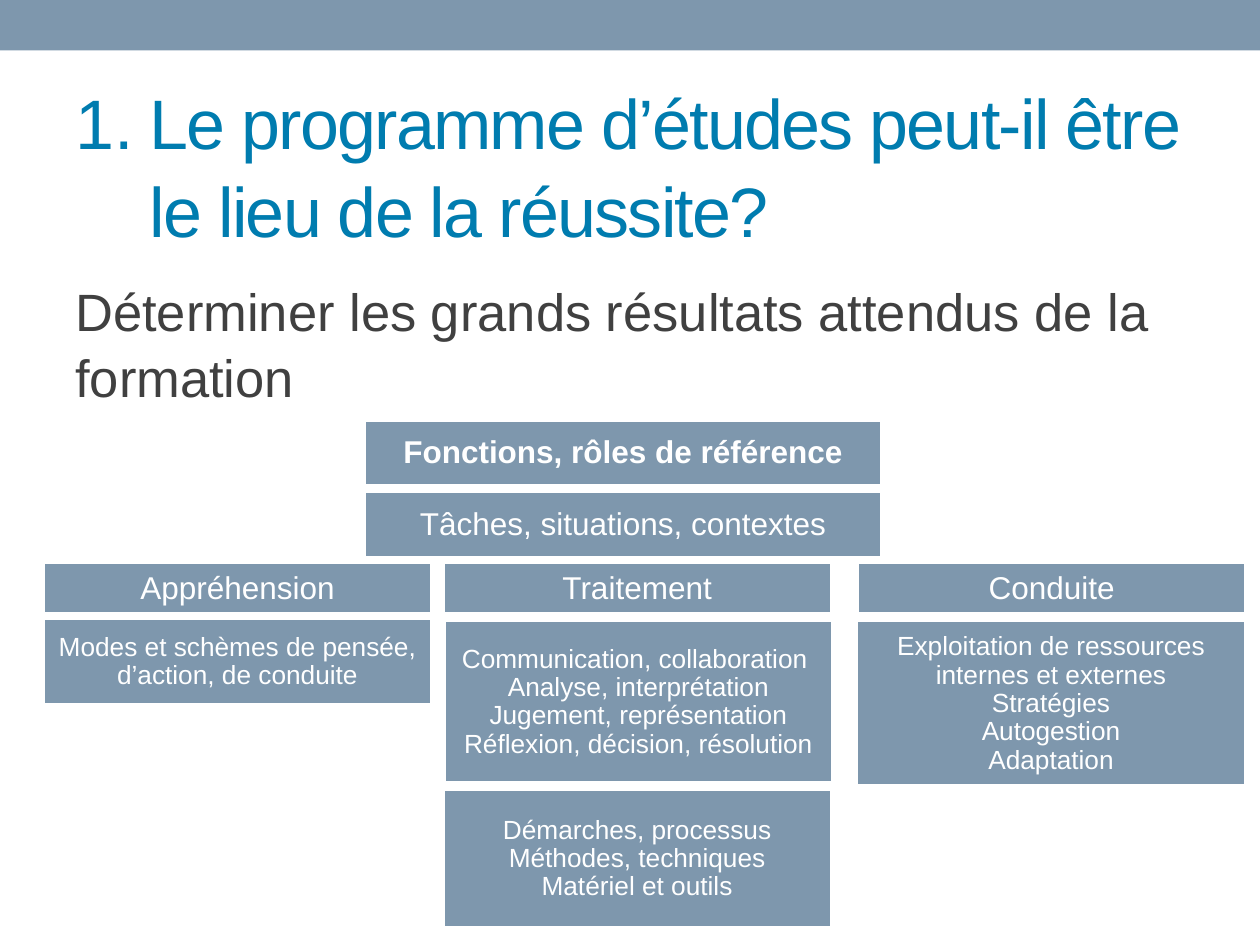
import pptx
import pptx.enum.text
import pptx.oxml
import pptx.util
from lxml import etree
from pptx.dml.color import RGBColor
from pptx.oxml.ns import qn

Pt = pptx.util.Pt
ALIGN = pptx.enum.text.PP_ALIGN
ANCHOR = pptx.enum.text.MSO_ANCHOR

COLORS = {"slate": "7E97AD", "title": "007CAF", "body": "404040", "white": "FFFFFF"}
TITLE = "Le programme d’études peut-il être le lieu de la réussite?"
BODY = "Déterminer les grands résultats attendus de la formation"

# Top rows: text, top, bold, space after
TOP_ROWS = [
    ("Fonctions, rôles de référence", 240.5, True, 0),
    ("Tâches, situations, contextes", 281.5, False, 12),
]
TOP_LEFT, TOP_WIDTH, TOP_HEIGHT = 208.8, 294.5, 37.4

# Columns: heading, left, and boxes as (lines, left shift, top, height)
COLUMNS = [
    ("Appréhension", 25.2, [
        (["Modes et schèmes de pensée, d’action, de conduite"], 0, 354, 49),
    ]),
    ("Traitement", 253.6, [
        (["Communication, collaboration ", "Analyse, interprétation",
          "Jugement, représentation", "Réflexion, décision, résolution"], 0.7, 355, 92.5),
        (["Démarches, processus", "Méthodes, techniques", "Matériel et outils"],
         0, 451.5, 79),
    ]),
    ("Conduite", 490.5, [
        (["Exploitation de ressources internes et externes", "Stratégies",
          "Autogestion", "Adaptation"], -0.4, 355, 89.5),
    ]),
]
COL_WIDTH, HEAD_TOP, HEAD_HEIGHT = 221, 322, 29.3
BORDERS = {"lnL": 1, "lnR": 1, "lnT": 1, "lnB": 3}


def rgb(name):
    return RGBColor.from_string(COLORS[name])


def write(tf, lines, size, color="white", bold=False, align=ALIGN.CENTER,
          anchor=ANCHOR.MIDDLE, spacing=None, before=0, after=0):
    tf.word_wrap = True
    tf.vertical_anchor = anchor
    for i, text in enumerate(lines):
        p = tf.paragraphs[0] if i == 0 else tf.add_paragraph()
        p.alignment = align
        p.line_spacing = spacing
        p.space_before, p.space_after = Pt(before), Pt(after)
        r = p.add_run()
        r.text = text
        r.font.name, r.font.size, r.font.bold = "Arial", Pt(size), bold
        r.font.color.rgb = rgb(color)
    return tf.paragraphs[0]


def add_box(s, lines, left, top, width, height, size, after=0, **fmt):
    """A one-cell table with white borders."""
    table = s.shapes.add_table(1, 1, Pt(left), Pt(top), Pt(width), Pt(height)).table
    cell = table.cell(0, 0)
    write(cell.text_frame, lines, size, after=after, spacing=0.97, **fmt)
    cell.vertical_anchor = ANCHOR.MIDDLE
    tcPr = cell._tc.get_or_add_tcPr()
    for tag, weight in BORDERS.items():
        ln = etree.SubElement(tcPr, qn("a:" + tag), w=str(Pt(weight)))
        fill = etree.SubElement(ln, qn("a:solidFill"))
        etree.SubElement(fill, qn("a:srgbClr"), val=COLORS["white"])
    cell.fill.solid()
    cell.fill.fore_color.rgb = rgb("slate")


def main():
    prs = pptx.Presentation()
    prs.slide_width, prs.slide_height = Pt(720), Pt(540)
    s = prs.slides.add_slide(prs.slide_layouts[6])

    # Top band
    band = s.shapes.add_shape(pptx.enum.shapes.MSO_SHAPE.RECTANGLE, 0, 0, Pt(720), Pt(28.8))
    band.shadow.inherit = False
    band.fill.solid()
    band.fill.fore_color.rgb = rgb("slate")
    band.line.fill.background()

    # Numbered title
    sp = s.shapes.add_textbox(Pt(36), Pt(42), Pt(648), Pt(103))
    p = write(sp.text_frame, [TITLE], 40, "title", align=ALIGN.LEFT, spacing=1.05)
    pPr = p._p.get_or_add_pPr()
    pPr.set("marL", str(Pt(42.5)))
    pPr.set("indent", str(-Pt(42.5)))
    etree.SubElement(pPr, qn("a:buFont"), typeface="Arial")
    etree.SubElement(pPr, qn("a:buAutoNum"), type="arabicPeriod")
    p.runs[0].font._element.set("spc", "-100")

    # Subtitle
    sp = s.shapes.add_textbox(Pt(36), Pt(154), Pt(648), Pt(42))
    write(sp.text_frame, [BODY], 30, "body", align=ALIGN.LEFT, anchor=ANCHOR.TOP,
          spacing=1.05, before=6)

    # Box diagram
    for text, top, bold, after in TOP_ROWS:
        add_box(s, [text], TOP_LEFT, top, TOP_WIDTH, TOP_HEIGHT, 18, bold=bold, after=after)
    for heading, left, boxes in COLUMNS:
        add_box(s, [heading], left, HEAD_TOP, COL_WIDTH, HEAD_HEIGHT, 18)
        for lines, shift, top, height in boxes:
            add_box(s, lines, left + shift, top, COL_WIDTH, height, 15)

    prs.save("out.pptx")


if __name__ == "__main__":
    import pptx.enum.shapes
    main()
